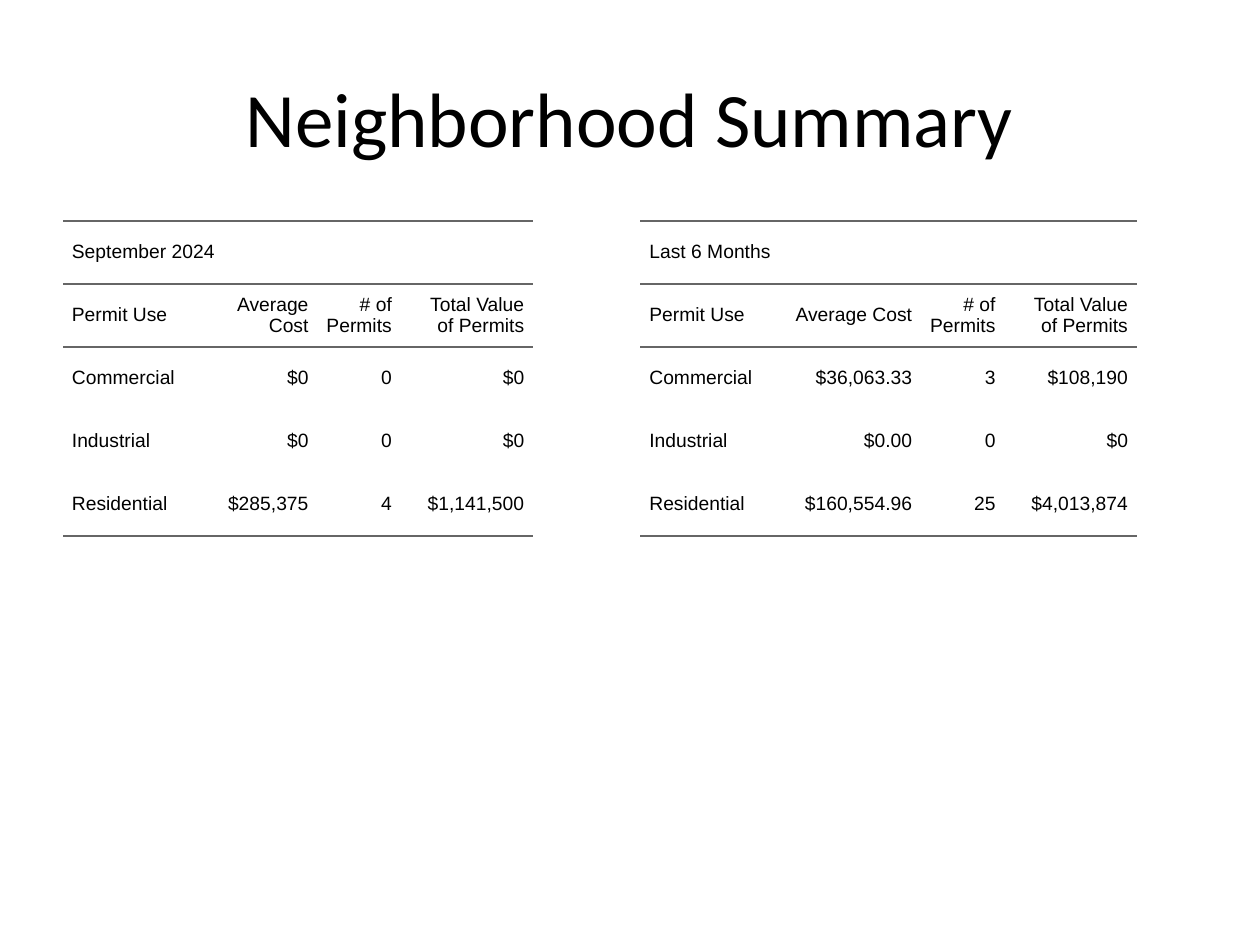
from dataclasses import dataclass

from lxml.etree import SubElement
from pptx import Presentation
from pptx.dml.color import RGBColor
from pptx.enum.text import MSO_ANCHOR, PP_ALIGN
from pptx.oxml.ns import qn
from pptx.util import Cm, Pt


@dataclass(frozen=True)
class Theme:
    text: RGBColor = RGBColor(0, 0, 0)
    rule: str = "666666"
    title_font: str = "Calibri"
    table_font: str = "Arial"
    title_size: int = 44
    table_size: int = 11
    rule_width: float = 1.5
    padding: int = Cm(0.18)


@dataclass(frozen=True)
class Box:
    left: int
    top: int
    width: int
    height: int


THEME = Theme()
ROW_HEIGHT = Cm(1.27)
RULED_EDGES = (0, 1, 2, 5)  # edges counted down from the top of the table
HEADINGS = ("Permit Use", "Average Cost", "# of Permits", "Total Value of Permits")
SEPTEMBER = (
    ("Commercial", "$0", "0", "$0"),
    ("Industrial", "$0", "0", "$0"),
    ("Residential", "$285,375", "4", "$1,141,500"),
)
SIX_MONTHS = (
    ("Commercial", "$36,063.33", "3", "$108,190"),
    ("Industrial", "$0.00", "0", "$0"),
    ("Residential", "$160,554.96", "25", "$4,013,874"),
)


def write_text(text_frame, text, *, font, size, align=PP_ALIGN.LEFT, padding=0, spacing=0):
    text_frame.word_wrap = True
    paragraph = text_frame.paragraphs[0]
    paragraph.alignment = align
    paragraph.space_before = paragraph.space_after = Pt(spacing)
    if padding:
        properties = paragraph._p.get_or_add_pPr()
        for side in ("marL", "marR"):
            properties.set(side, str(padding))
        properties.set("indent", "0")
    run = paragraph.add_run()
    run.text = text
    run.font.name = font
    run.font.size = Pt(size)
    run.font.color.rgb = THEME.text


def style_cell(cell, row):
    """Clear the fill and draw only the horizontal rules that touch this row."""
    cell.vertical_anchor = MSO_ANCHOR.MIDDLE
    cell.margin_left = cell.margin_right = 0
    cell.margin_top = cell.margin_bottom = THEME.padding
    properties = cell._tc.get_or_add_tcPr()
    ruled = {"a:lnL": False, "a:lnR": False,
             "a:lnT": row in RULED_EDGES, "a:lnB": row + 1 in RULED_EDGES}
    for side, visible in ruled.items():
        line = SubElement(properties, qn(side), w=str(Pt(THEME.rule_width)))
        if visible:
            fill = SubElement(line, qn("a:solidFill"))
            SubElement(fill, qn("a:srgbClr"), val=THEME.rule)
        else:
            SubElement(line, qn("a:noFill"))
    cell.fill.background()


def add_title(slide, box, text):
    shape = slide.shapes.add_textbox(box.left, box.top, box.width, box.height)
    shape.text_frame.vertical_anchor = MSO_ANCHOR.MIDDLE
    write_text(shape.text_frame, text, font=THEME.title_font,
               size=THEME.title_size, align=PP_ALIGN.CENTER)


def add_permit_table(slide, box, period, records, column_widths):
    rows = ((period,), HEADINGS, *records)
    frame = slide.shapes.add_table(len(rows), len(HEADINGS), box.left, box.top,
                                   box.width, box.height)
    table = frame.table
    table.first_row = table.horz_banding = False
    for column, width in zip(table.columns, column_widths):
        column.width = width
    for row in table.rows:
        row.height = ROW_HEIGHT
    frame.width, frame.height = box.width, box.height
    table.cell(0, 0).merge(table.cell(0, len(HEADINGS) - 1))

    for row_index, values in enumerate(rows):
        for column_index in range(len(HEADINGS)):
            style_cell(table.cell(row_index, column_index), row_index)
        for column_index, value in enumerate(values):
            write_text(table.cell(row_index, column_index).text_frame, value,
                       font=THEME.table_font, size=THEME.table_size,
                       align=PP_ALIGN.RIGHT if column_index else PP_ALIGN.LEFT,
                       padding=THEME.padding, spacing=5)


def main():
    presentation = Presentation()
    presentation.slide_width, presentation.slide_height = Cm(25.4), Cm(19.05)
    slide = presentation.slides.add_slide(presentation.slide_layouts[6])

    margin, table_top = Cm(1.27), Cm(4.45)
    table_width, table_height = Cm(11.22), Cm(12.57)
    content_width = presentation.slide_width - 2 * margin
    right_table_left = margin + content_width - table_width

    add_permit_table(slide, Box(margin, table_top, table_width, table_height),
                     "September 2024", SEPTEMBER,
                     (Cm(2.79), Cm(2.34), Cm(1.68), Cm(2.67)))
    add_permit_table(slide, Box(right_table_left, table_top, table_width, table_height),
                     "Last 6 Months", SIX_MONTHS,
                     (Cm(2.79), Cm(2.87), Cm(1.68), Cm(2.67)))
    add_title(slide, Box(margin, Cm(0.76), content_width, Cm(3.18)), "Neighborhood Summary")
    presentation.save("out.pptx")


if __name__ == "__main__":
    main()
